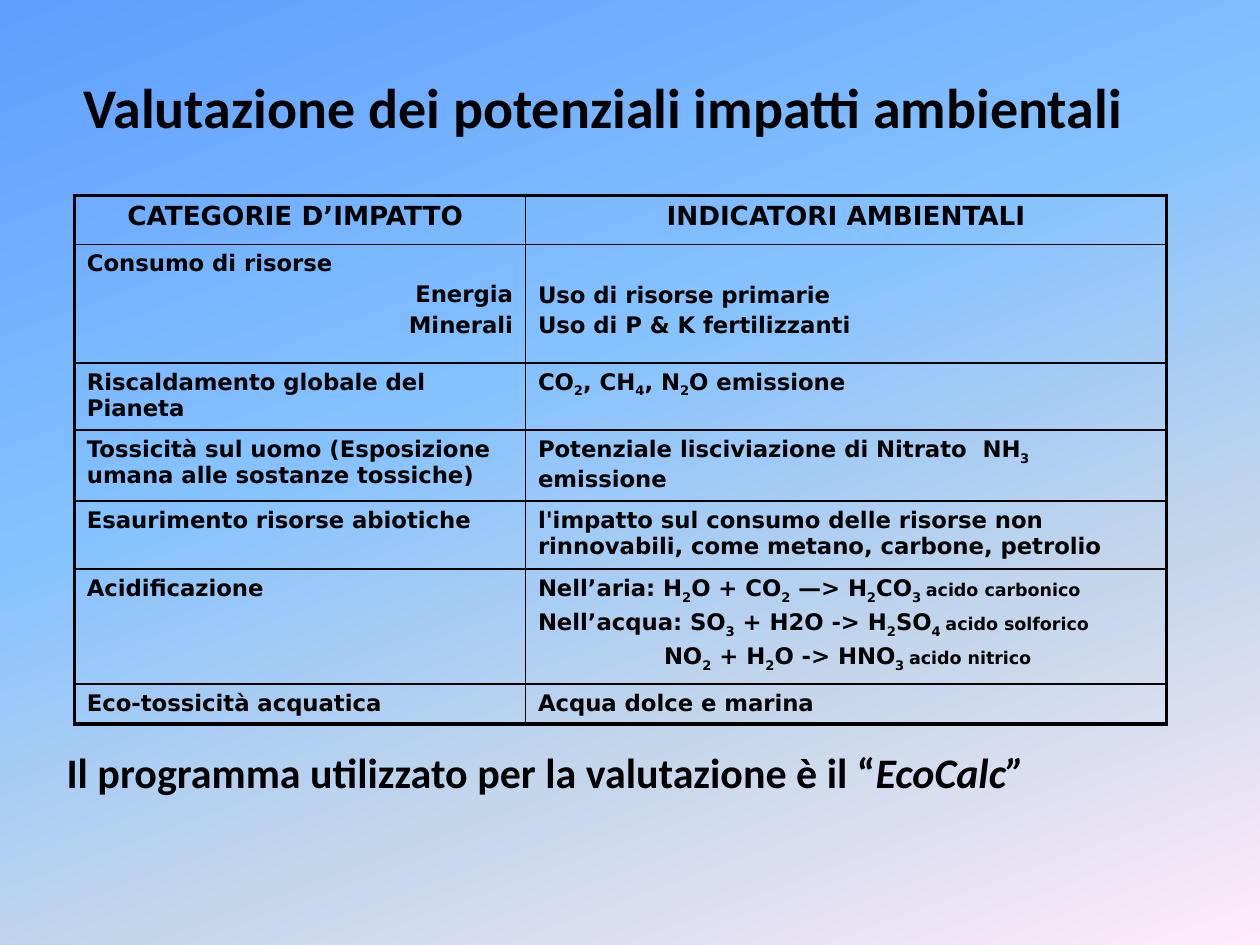
"""Build a slide on the assessment of environmental impacts."""
from lxml.etree import SubElement
from pptx import Presentation
from pptx.dml.color import RGBColor
from pptx.enum.text import MSO_ANCHOR, MSO_AUTO_SIZE, PP_ALIGN
from pptx.oxml import parse_xml
from pptx.oxml.ns import nsdecls, qn
from pptx.util import Inches, Pt

BLACK = RGBColor(0, 0, 0)
STOPS = [
    (0, RGBColor(0x5E, 0x9E, 0xFF)),
    (40, RGBColor(0x85, 0xC2, 0xFF)),
    (70, RGBColor(0xC4, 0xD6, 0xEB)),
    (100, RGBColor(0xFF, 0xEB, 0xFA)),
]
ANGLE = 70
HEAD, BODY = "Calibri", "DejaVu Sans"
LEFT, MID, RIGHT = PP_ALIGN.LEFT, PP_ALIGN.CENTER, PP_ALIGN.RIGHT
THICK, THIN = 2.25, 1

TITLE = "Valutazione dei potenziali impatti ambientali "
CLOSING = [("Il programma utilizzato per la valutazione è il “", False),
           ("EcoCalc”", True)]
COLS = [3.58, 5.09]
ROWS = [
    (0.39, ["CATEGORIE D’IMPATTO "], ["INDICATORI AMBIENTALI"]),
    (0.94, ["Consumo di risorse", "Energia", "Minerali"],
     ["Uso di risorse primarie", "Uso di P & K fertilizzanti"]),
    (0.53, ["Riscaldamento globale del Pianeta"],
     ["CO[2], CH[4], N[2]O emissione"]),
    (0.56, ["Tossicità sul uomo (Esposizione umana alle sostanze tossiche)"],
     ["Potenziale lisciviazione di Nitrato  NH[3] emissione"]),
    (0.54, ["Esaurimento risorse abiotiche"],
     ["l'impatto sul consumo delle risorse non rinnovabili, "
      "come metano, carbone, petrolio"]),
    (0.91, ["Acidificazione"],
     ["Nell’aria: H[2]O + CO[2] —> H[2]CO[3 ]|acido carbonico",
      "Nell’acqua: SO[3] + H2O -> H[2]SO[4 ]|acido solforico",
      "NO[2] + H[2]O -> HNO[3 ]|acido nitrico"]),
    (0.31, ["Eco-tossicità acquatica"], ["Acqua dolce e marina"]),
]
ALIGNS = {"Energia": RIGHT, "Minerali": RIGHT}
INDENTS = {"NO[2] + H[2]O -> HNO[3 ]|acido nitrico": 1}
DROPS = {(1, 1): 0.3}


def add_run(para, text, font, size, slant=False):
    run = para.add_run()
    run.text = text
    run.font.name = font
    run.font.size = Pt(size)
    run.font.bold = True
    run.font.italic = slant
    run.font.color.rgb = BLACK
    return run


def add_line(para, text, size):
    main, _, note = text.partition("|")
    for i, part in enumerate(main.replace("]", "[").split("[")):
        if part:
            run = add_run(para, part, BODY, size)
            if i % 2:
                run._r.get_or_add_rPr().set("baseline", "-25000")
    if note:
        add_run(para, note, BODY, 10)


def set_edge(cell, side, width):
    props = cell._tc.get_or_add_tcPr()
    line = SubElement(props, qn(f"a:ln{side}"), w=str(Pt(width)))
    fill = SubElement(line, qn("a:solidFill"))
    SubElement(fill, qn("a:srgbClr"), val=str(BLACK))


def fill_cell(cell, lines, row, col):
    size = 13 if row else 15
    frame = cell.text_frame
    for i, text in enumerate(lines):
        para = frame.add_paragraph() if i else frame.paragraphs[0]
        para.alignment = ALIGNS.get(text, LEFT) if row else MID
        para.space_before = Pt(size * 0.2)
        if text in INDENTS:
            para._p.get_or_add_pPr().set("marL", str(Inches(INDENTS[text])))
        add_line(para, text, size)
    cell.margin_top = Inches(DROPS.get((row, col), 0.05))
    outer = {"L": col == 0, "R": col == len(COLS) - 1,
             "T": row == 0, "B": row == len(ROWS) - 1}
    for side, edge in outer.items():
        set_edge(cell, side, THICK if edge else THIN)
    cell.fill.background()


def paint_back(slide):
    stops = "".join(f'<a:gs pos="{pos * 1000}"><a:srgbClr val="{tone}"/></a:gs>'
                    for pos, tone in STOPS)
    back = parse_xml(
        f'<p:bg {nsdecls("p", "a")}><p:bgPr><a:gradFill rotWithShape="0">'
        f'<a:gsLst>{stops}</a:gsLst><a:lin ang="{ANGLE * 60000}" scaled="0"/>'
        '</a:gradFill><a:effectLst/></p:bgPr></p:bg>')
    slide._element.cSld.insert(0, back)


def add_title(slide):
    title = slide.shapes.title
    title.left, title.top = Inches(0.43), Inches(0.52)
    title.width, title.height = Inches(8.82), Inches(0.64)
    frame = title.text_frame
    frame.auto_size = MSO_AUTO_SIZE.NONE
    frame.vertical_anchor = MSO_ANCHOR.MIDDLE
    para = frame.paragraphs[0]
    para.alignment = MID
    add_run(para, TITLE, HEAD, 32)


def add_grid(slide):
    high = sum(row[0] for row in ROWS)
    table = slide.shapes.add_table(
        len(ROWS), len(COLS), Inches(0.59), Inches(1.55),
        Inches(sum(COLS)), Inches(high)).table
    table.first_row = table.horz_banding = False
    for col, wide in enumerate(COLS):
        table.columns[col].width = Inches(wide)
    for row, (tall, *cells) in enumerate(ROWS):
        table.rows[row].height = Inches(tall)
        for col, lines in enumerate(cells):
            fill_cell(table.cell(row, col), lines, row, col)


def add_closing(slide):
    box = slide.shapes.add_textbox(
        Inches(0.43), Inches(5.95), Inches(8.67), Inches(0.43))
    box.text_frame.word_wrap = True
    para = box.text_frame.paragraphs[0]
    para.line_spacing = 0.8
    for text, slant in CLOSING:
        add_run(para, text, HEAD, 24, slant)


def main():
    deck = Presentation()
    deck.slide_width, deck.slide_height = Inches(10), Inches(7.5)
    slide = deck.slides.add_slide(deck.slide_layouts.get_by_name("Title Only"))
    paint_back(slide)
    add_title(slide)
    add_closing(slide)
    add_grid(slide)
    deck.save("out.pptx")


if __name__ == "__main__":
    main()
